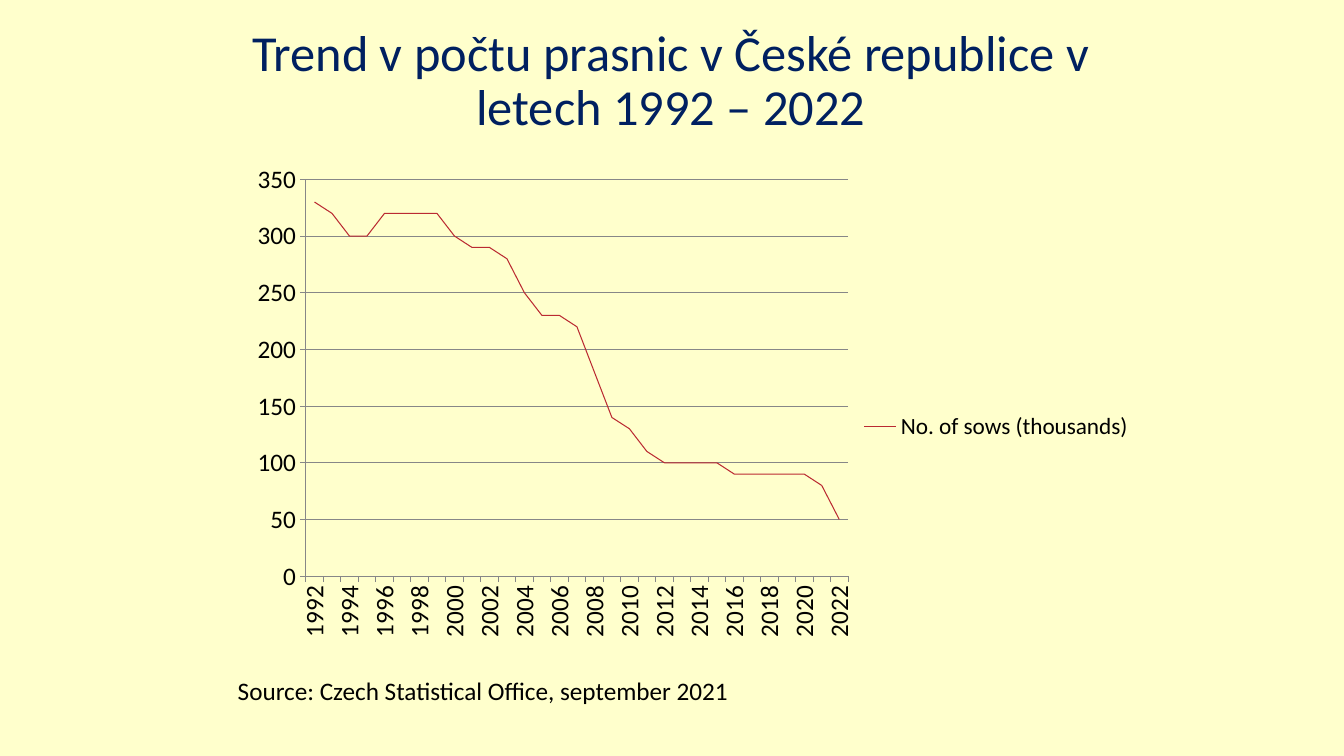
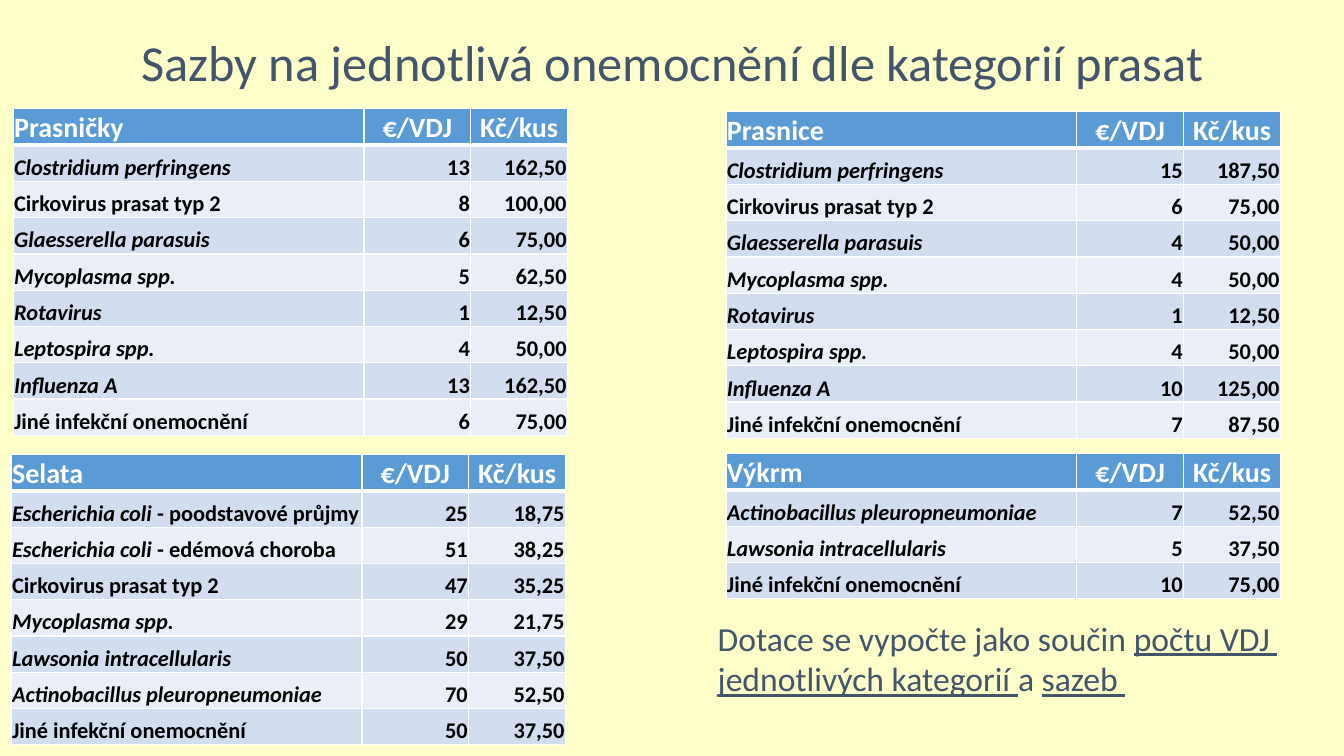
"""Build two slides on Czech pig farming: the sow trend and the subsidy rates by disease."""
from dataclasses import dataclass

from lxml.etree import SubElement
from pptx import Presentation
from pptx.chart.data import CategoryChartData
from pptx.dml.color import RGBColor
from pptx.enum.chart import XL_CHART_TYPE, XL_LEGEND_POSITION, XL_TICK_MARK
from pptx.enum.text import MSO_ANCHOR, PP_ALIGN
from pptx.oxml import parse_xml
from pptx.oxml.ns import nsdecls, qn
from pptx.util import Inches, Pt


@dataclass(frozen=True)
class Theme:
    font: str = "Calibri"
    page: str = "FFFFCC"
    navy: str = "002060"
    slate: str = "44546A"
    black: str = "000000"
    white: str = "FFFFFF"
    header: str = "5B9BD5"
    bands: tuple[str, str] = ("D2DEEF", "EAEFF7")
    grid: str = "878787"
    trend: str = "BA2A32"
    title_size: float = 36
    note_size: float = 24
    header_size: float = 20
    body_size: float = 18
    legend_size: float = 16.6
    cell_size: float = 16


@dataclass(frozen=True)
class Box:
    left: float
    top: float
    width: float
    height: float

    def lengths(self) -> tuple:
        return tuple(Inches(n) for n in (self.left, self.top, self.width, self.height))


@dataclass(frozen=True)
class Disease:
    latin: str = ""
    plain: str = ""


@dataclass(frozen=True)
class RateTable:
    category: str
    left: float
    top: float
    crowns_per_euro: float
    diseases: tuple[Disease, ...]
    rates: tuple[int, ...]


THEME = Theme()
COLUMN_WIDTHS = (3.48, 1.06, 0.96)
ROW_HEIGHT = 0.36
SOWS = (330, 320, 300, 300, 320, 320, 320, 320, 300, 290, 290, 280, 250, 230, 230, 220,
        180, 140, 130, 110, 100, 100, 100, 100, 90, 90, 90, 90, 90, 80, 50)

CIRCOVIRUS = Disease(plain="Cirkovirus prasat typ 2")
MYCOPLASMA = Disease("Mycoplasma spp.")
LAWSONIA = Disease("Lawsonia intracellularis")
ACTINOBACILLUS = Disease("Actinobacillus pleuropneumoniae")
OTHER = Disease(plain="Jiné infekční onemocnění")
BREEDING = (Disease("Clostridium perfringens"), CIRCOVIRUS, Disease("Glaesserella parasuis"),
            MYCOPLASMA, Disease("Rotavirus"), Disease("Leptospira spp."),
            Disease("Influenza A"), OTHER)
PIGLETS = (Disease("Escherichia coli ", "- poodstavové průjmy"),
           Disease("Escherichia coli ", "- edémová choroba"),
           CIRCOVIRUS, MYCOPLASMA, LAWSONIA, ACTINOBACILLUS, OTHER)
FATTENING = (ACTINOBACILLUS, LAWSONIA, OTHER)
RATE_TABLES = (
    RateTable("Prasničky", 0.13, 1.08, 12.5, BREEDING, (13, 8, 6, 5, 1, 4, 13, 6)),
    RateTable("Prasnice", 7.2, 1.11, 12.5, BREEDING, (15, 6, 4, 4, 1, 4, 10, 7)),
    RateTable("Selata", 0.11, 4.51, 0.75, PIGLETS, (25, 51, 47, 29, 50, 70, 50)),
    RateTable("Výkrm", 7.2, 4.5, 7.5, FATTENING, (7, 5, 10)),
)


def format_font(font, *, size: float, color: str, bold: bool = False,
                italic: bool = False, underline: bool = False) -> None:
    """Apply the theme typeface and the given format."""
    font.name, font.size = THEME.font, Pt(size)
    font.color.rgb = RGBColor.from_string(color)
    font.bold, font.italic, font.underline = bold, italic, underline


def add_span(para, text: str, **style) -> None:
    """Append formatted text to a paragraph."""
    span = para.add_run()
    span.text = text
    format_font(span.font, **style)


def add_text_frame(page, box: Box, *, anchor=MSO_ANCHOR.TOP, wrap: bool = True):
    """Add a text box and return its frame."""
    frame = page.shapes.add_textbox(*box.lengths()).text_frame
    frame.word_wrap, frame.vertical_anchor = wrap, anchor
    return frame


def add_title(page, box: Box, text: str, color: str) -> None:
    """Add a centred slide title."""
    para = add_text_frame(page, box, anchor=MSO_ANCHOR.MIDDLE).paragraphs[0]
    para.alignment, para.line_spacing = PP_ALIGN.CENTER, 0.9
    add_span(para, text, size=THEME.title_size, color=color)


def place_plot(chart) -> None:
    """Fix the inner plot area as fractions of the chart."""
    plot_area = chart.plots[0]._element.getparent()
    for old in plot_area.findall(qn("c:layout")):
        plot_area.remove(old)
    layout = parse_xml(f"<c:layout {nsdecls('c')}/>")
    manual = SubElement(layout, qn("c:manualLayout"))
    settings = (("layoutTarget", "inner"), ("xMode", "edge"), ("yMode", "edge"),
                ("x", "0.078"), ("y", "0.056"), ("w", "0.597"), ("h", "0.712"))
    for name, value in settings:
        SubElement(manual, qn(f"c:{name}")).set("val", value)
    plot_area.insert(0, layout)


def add_sow_chart(page, box: Box) -> None:
    """Add the line chart of sow numbers."""
    chart_data = CategoryChartData(number_format="#,##0")
    chart_data.categories = [str(1992 + offset) for offset in range(len(SOWS))]
    chart_data.add_series("No. of sows (thousands)", SOWS)
    chart = page.shapes.add_chart(XL_CHART_TYPE.LINE, *box.lengths(), chart_data).chart
    format_font(chart.font, size=THEME.body_size, color=THEME.black)
    chart.has_title = False
    chart.has_legend = True
    chart.legend.position = XL_LEGEND_POSITION.RIGHT
    chart.legend.include_in_layout = False
    format_font(chart.legend.font, size=THEME.legend_size, color=THEME.black)
    place_plot(chart)

    series = chart.plots[0].series[0]
    series.smooth = False
    chart.plots[0].vary_by_categories = False
    years, counts = chart.category_axis, chart.value_axis
    counts.minimum_scale, counts.maximum_scale, counts.major_unit = 0, 350, 50
    counts.has_major_gridlines = True
    for axis in (years, counts):
        axis.major_tick_mark = XL_TICK_MARK.OUTSIDE
        format_font(axis.tick_labels.font, size=THEME.body_size, color=THEME.black)
    for line, color in ((series.format.line, THEME.trend), (years.format.line, THEME.grid),
                        (counts.format.line, THEME.grid),
                        (counts.major_gridlines.format.line, THEME.grid)):
        line.color.rgb, line.width = RGBColor.from_string(color), Pt(0.75)

    body = years._element.find(qn("c:txPr")).find(qn("a:bodyPr"))
    body.set("rot", "-5400000")
    body.set("vert", "horz")
    skip = parse_xml(f'<c:tickLblSkip {nsdecls("c")} val="2"/>')
    years._element.find(qn("c:noMultiLvlLbl")).addprevious(skip)


def format_cell(cell, fill: str, alignment, top: float, bottom: float) -> None:
    """Set the borders, fill, margins and alignment of a table cell."""
    properties = cell._tc.get_or_add_tcPr()
    for side, width in (("L", 1), ("R", 1), ("T", top), ("B", bottom)):
        border = SubElement(properties, qn(f"a:ln{side}"), w=str(Pt(width)))
        solid = SubElement(border, qn("a:solidFill"))
        SubElement(solid, qn("a:srgbClr"), val=THEME.white)
    cell.fill.solid()
    cell.fill.fore_color.rgb = RGBColor.from_string(fill)
    cell.margin_left = cell.margin_right = cell.margin_top = Inches(0.01)
    cell.margin_bottom = 0
    cell.vertical_anchor = MSO_ANCHOR.BOTTOM
    cell.text_frame.paragraphs[0].alignment = alignment


def add_rate_table(page, rate_table: RateTable) -> None:
    """Add one table of rates with a header and banded rows."""
    rows = [(Disease(plain=rate_table.category), "€/VDJ", "Kč/kus")]
    for disease, rate in zip(rate_table.diseases, rate_table.rates):
        crowns = f"{rate * rate_table.crowns_per_euro:.2f}".replace(".", ",")
        rows.append((disease, str(rate), crowns))
    box = Box(rate_table.left, rate_table.top, sum(COLUMN_WIDTHS), ROW_HEIGHT * len(rows))
    table = page.shapes.add_table(len(rows), len(COLUMN_WIDTHS), *box.lengths()).table
    for column, width in zip(table.columns, COLUMN_WIDTHS):
        column.width = Inches(width)
    for row_index, (disease, *numbers) in enumerate(rows):
        table.rows[row_index].height = Inches(ROW_HEIGHT)
        is_header = row_index == 0
        fill = THEME.header if is_header else THEME.bands[(row_index - 1) % 2]
        number_alignment = PP_ALIGN.CENTER if is_header else PP_ALIGN.RIGHT
        style = {"size": THEME.header_size if is_header else THEME.cell_size,
                 "color": THEME.white if is_header else THEME.black, "bold": True}
        names = (disease, *(Disease(plain=number) for number in numbers))
        for column_index, name in enumerate(names):
            cell = table.cell(row_index, column_index)
            format_cell(cell, fill, number_alignment if column_index else PP_ALIGN.LEFT,
                        top=3 if row_index == 1 else 1, bottom=3 if is_header else 1)
            for text, italic in ((name.latin, True), (name.plain, False)):
                if text:
                    add_span(cell.text_frame.paragraphs[0], text, italic=italic, **style)


def build_trend_page(page) -> None:
    """Fill the slide with the sow trend."""
    add_title(page, Box(1.94, 0.42, 9.43, 0.79),
              "Trend v počtu prasnic v České republice v letech 1992 – 2022", THEME.navy)
    add_sow_chart(page, Box(2.33, 1.47, 9.01, 5.53))
    source = add_text_frame(page, Box(2.26, 6.65, 6.2, 0.4))
    add_span(source.paragraphs[0], "Source: Czech Statistical Office, september 2021",
             size=THEME.body_size, color=THEME.black)


def build_rates_page(page) -> None:
    """Fill the slide with the rate tables and the subsidy rule."""
    add_title(page, Box(0.92, -0.08, 11.5, 1.45),
              "Sazby na jednotlivá onemocnění dle kategorií prasat", THEME.slate)
    for rate_table in RATE_TABLES:
        add_rate_table(page, rate_table)
    note = add_text_frame(page, Box(7.02, 6.08, 5.88, 0.91), wrap=False)
    lines = ((("Dotace se vypočte jako součin ", False), ("počtu VDJ ", True)),
             (("jednotlivých kategorií ", True), ("a ", False), ("sazeb ", True)))
    for para, spans in zip((note.paragraphs[0], note.add_paragraph()), lines):
        para.alignment = PP_ALIGN.LEFT
        for text, underline in spans:
            add_span(para, text, size=THEME.note_size, color=THEME.slate, underline=underline)


def main() -> None:
    """Build and save the deck."""
    deck = Presentation()
    deck.slide_width, deck.slide_height = Inches(13.33), Inches(7.5)
    background = deck.slide_master.background.fill
    background.solid()
    background.fore_color.rgb = RGBColor.from_string(THEME.page)
    for build_page in (build_trend_page, build_rates_page):
        build_page(deck.slides.add_slide(deck.slide_layouts[6]))
    deck.save("out.pptx")


if __name__ == "__main__":
    main()
